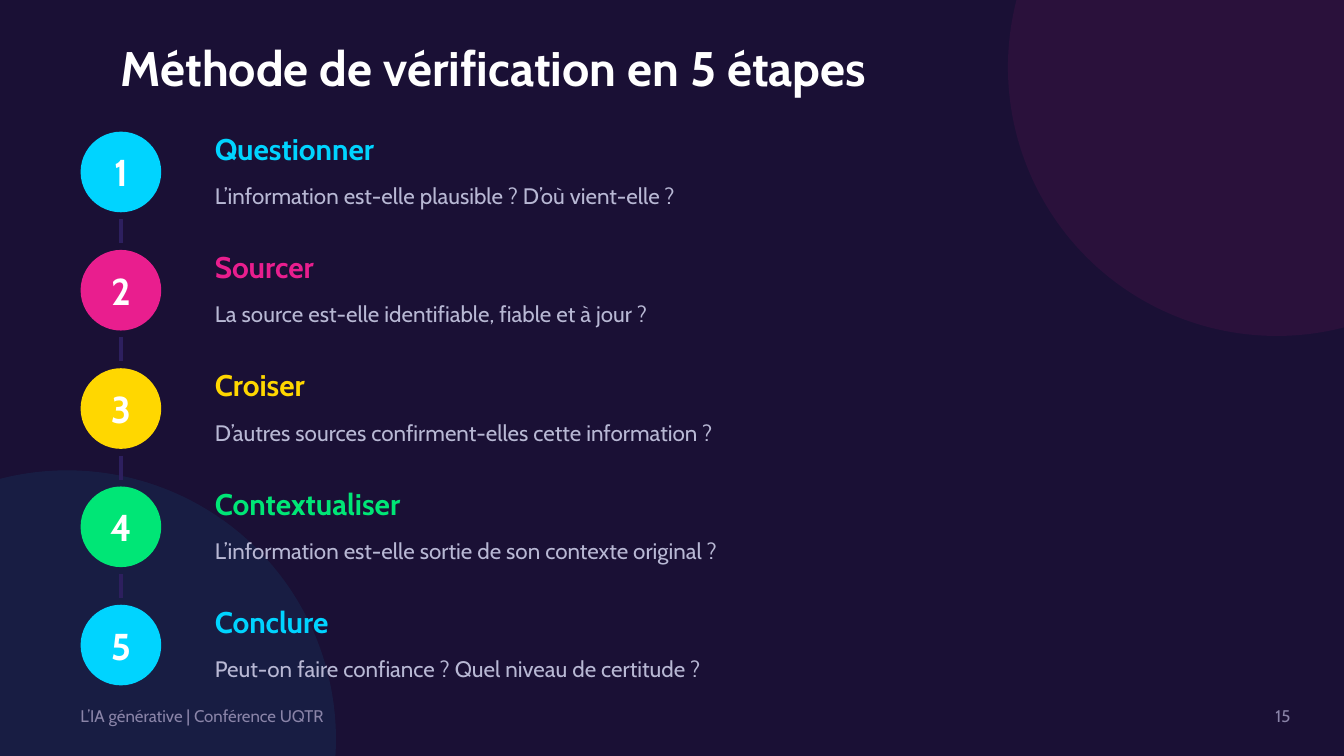
"""Build the slide that presents a five-step verification method."""
from typing import NamedTuple

from lxml.etree import SubElement
from pptx import Presentation
from pptx.dml.color import RGBColor as RGB
from pptx.enum.shapes import MSO_CONNECTOR as CONN, MSO_SHAPE as SHAPE
from pptx.enum.text import MSO_ANCHOR as ANCHOR, PP_ALIGN as ALIGN
from pptx.oxml.ns import qn
from pptx.slide import Slide
from pptx.util import Emu, Pt

PX = 914400 // 200
FONT = "Cabin"
COLORS = {
    "night": "1A1035", "white": "FFFFFF", "lilac": "B8B8D4",
    "muted": "8A84A8", "link": "2D1F5E", "cyan": "00D4FF",
    "pink": "E91E8E", "yellow": "FFD700", "green": "00E676",
}


class Box(NamedTuple):
    x: int
    y: int
    w: int
    h: int


class Style(NamedTuple):
    size: int
    color: str
    bold: bool = False
    align: ALIGN = ALIGN.LEFT


class Step(NamedTuple):
    name: str
    question: str
    color: str


STEPS = [
    Step("Questionner", "L’information est-elle plausible ? D’où vient-elle ?", "cyan"),
    Step("Sourcer", "La source est-elle identifiable, fiable et à jour ?", "pink"),
    Step("Croiser", "D’autres sources confirment-elles cette information ?", "yellow"),
    Step("Contextualiser", "L’information est-elle sortie de son contexte original ?", "green"),
    Step("Conclure", "Peut-on faire confiance ? Quel niveau de certitude ?", "cyan"),
]
STEP_TOP, STEP_PITCH = 186, 176
BADGE, BADGE_X = 120, 120
TEXT_X, ROW_H = 300, 70


def px(n: int) -> Emu:
    return Emu(n * PX)


def rgb(name: str) -> RGB:
    return RGB.from_string(COLORS[name])


def add_circle(s: Slide, box: Box, color: str, opacity: int = 100) -> None:
    sp = s.shapes.add_shape(SHAPE.OVAL, *map(px, box))
    sp.shadow.inherit = False
    sp.fill.solid()
    sp.fill.fore_color.rgb = rgb(color)
    sp.line.fill.background()
    if opacity < 100:
        clr = sp.fill._xPr.find(f".//{qn('a:srgbClr')}")
        SubElement(clr, qn("a:alpha"), val=str(opacity * 1000))


def add_text(s: Slide, box: Box, text: str, style: Style) -> None:
    tf = s.shapes.add_textbox(*map(px, box)).text_frame
    tf.word_wrap = True
    tf.vertical_anchor = ANCHOR.MIDDLE
    p = tf.paragraphs[0]
    p.alignment = style.align
    r = p.add_run()
    r.text = text
    r.font.name = FONT
    r.font.size = Pt(style.size)
    r.font.bold = style.bold
    r.font.color.rgb = rgb(style.color)


def add_link(s: Slide, x: int, top: int, bottom: int) -> None:
    line = s.shapes.add_connector(CONN.STRAIGHT, px(x), px(top), px(x), px(bottom))
    line.line.color.rgb = rgb("link")
    line.line.width = Pt(2)
    SubElement(line._element.spPr, qn("a:effectLst"))


def add_step(s: Slide, number: int, step: Step) -> None:
    top = STEP_TOP + (number - 1) * STEP_PITCH
    badge = Box(BADGE_X, top + 10, BADGE, BADGE)
    add_circle(s, badge, step.color)
    add_text(s, badge, str(number), Style(20, "white", True, ALIGN.CENTER))
    add_text(s, Box(TEXT_X, top, 500, ROW_H), step.name, Style(16, step.color, True))
    add_text(s, Box(TEXT_X, top + ROW_H, 1600, ROW_H), step.question, Style(12, "lilac"))
    if number < len(STEPS):
        add_link(s, BADGE_X + BADGE // 2, top + 2 * ROW_H, top + STEP_PITCH)


def main() -> None:
    prs = Presentation()
    prs.slide_width, prs.slide_height = px(2000), px(1125)
    s = prs.slides.add_slide(prs.slide_layouts[6])
    s.background.fill.solid()
    s.background.fill.fore_color.rgb = rgb("night")

    add_circle(s, Box(1500, -300, 800, 800), "pink", 8)
    add_circle(s, Box(-300, 700, 800, 800), "cyan", 7)
    add_text(s, Box(160, 40, 1800, 120), "Méthode de vérification en 5 étapes",
             Style(26, "white", True))
    for number, step in enumerate(STEPS, 1):
        add_step(s, number, step)
    add_text(s, Box(100, 1030, 1800, ROW_H), "L’IA générative | Conférence UQTR",
             Style(9, "muted"))
    add_text(s, Box(1840, 1030, 100, ROW_H), "15", Style(9, "muted", align=ALIGN.RIGHT))
    prs.save("out.pptx")


if __name__ == "__main__":
    main()
